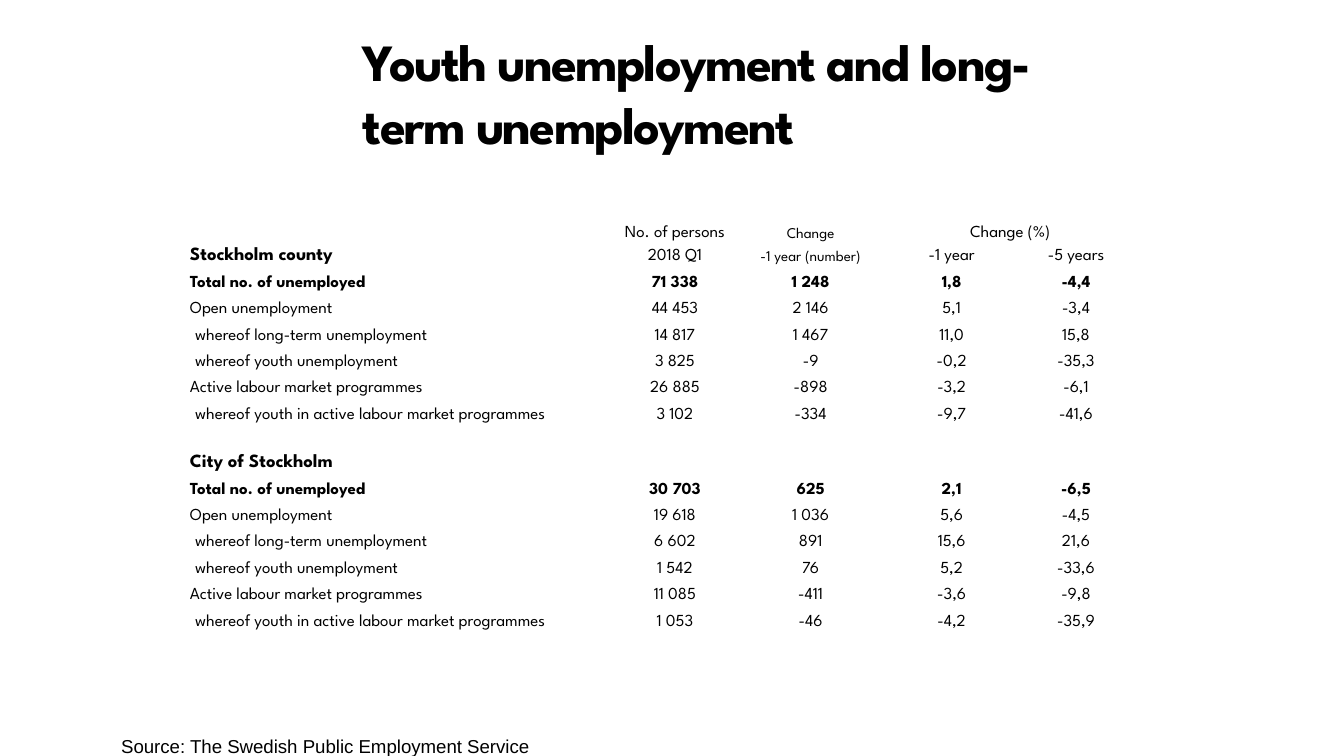
from lxml import etree
from pptx import Presentation
from pptx import util as u
from pptx.dml.color import RGBColor
from pptx.enum import text
from pptx.oxml.ns import qn

COLOURS = {"text": "000000"}
HEADING_FONT = "League Spartan"
SOURCE_FONT = "Arial"

LABELS = [
    "Total no. of unemployed",
    "Open unemployment",
    "whereof long-term unemployment",
    "whereof youth unemployment",
    "Active labour market programmes",
    "whereof youth in active labour market programmes",
]
COUNTY = [
    ("71 338", "1 248", "1,8", "-4,4"),
    ("44 453", "2 146", "5,1", "-3,4"),
    ("14 817", "1 467", "11,0", "15,8"),
    ("3 825", "-9", "-0,2", "-35,3"),
    ("26 885", "-898", "-3,2", "-6,1"),
    ("3 102", "-334", "-9,7", "-41,6"),
]
CITY = [
    ("30 703", "625", "2,1", "-6,5"),
    ("19 618", "1 036", "5,6", "-4,5"),
    ("6 602", "891", "15,6", "21,6"),
    ("1 542", "76", "5,2", "-33,6"),
    ("11 085", "-411", "-3,6", "-9,8"),
    ("1 053", "-46", "-4,2", "-35,9"),
]
BLANK = ("",) * 4
ROWS = [
    ("", "No. of persons", "Change", "Change (%)", ""),
    ("Stockholm county", "2018 Q1", "-1 year (number)", "-1 year", "-5 years"),
    *[(label, *values) for label, values in zip(LABELS, COUNTY)],
    ("", *BLANK),
    ("City of Stockholm", *BLANK),
    *[(label, *values) for label, values in zip(LABELS, CITY)],
]
REGIONS = ("Stockholm county", "City of Stockholm")
SMALL_HEADERS = ("Change", "-1 year (number)")
COLUMN_WIDTHS = [8.05, 2.29, 2.84, 2.49, 2.21]
ROW_HEIGHT = 0.5
SPECIAL_HEIGHTS = {0: 0.61, 1: 0.43, 8: 0.41}


def set_values(target, **values):
    for name, value in values.items():
        setattr(target, name, value)


def add_span(para, wording, font_name, size, bold=False):
    span = para.add_run()
    span.text = wording
    set_values(span.font, name=font_name, size=u.Pt(size), bold=bold)
    span.font.color.rgb = RGBColor.from_string(COLOURS["text"])
    return span


def set_frame(frame, wrap):
    set_values(frame, margin_left=0, margin_right=0, margin_top=0, margin_bottom=0,
               word_wrap=wrap, vertical_anchor=text.MSO_ANCHOR.TOP,
               auto_size=text.MSO_AUTO_SIZE.NONE)


def add_title(page, wording):
    title = page.shapes.title
    set_values(title, left=u.Cm(6.86), top=u.Cm(0.56),
               width=u.Cm(13.34), height=u.Cm(1.65))
    set_frame(title.text_frame, True)
    para = title.text_frame.paragraphs[0]
    set_values(para, alignment=text.PP_ALIGN.LEFT, line_spacing=1.0)
    span = add_span(para, wording, HEADING_FONT, 28, True)
    span.font._element.set("spc", "-90")


def add_source(page, wording):
    box = page.shapes.add_textbox(u.Cm(2.29), u.Cm(13.46), u.Cm(2.54), u.Cm(1.07))
    set_frame(box.text_frame, False)
    para = box.text_frame.paragraphs[0]
    set_values(para, alignment=text.PP_ALIGN.LEFT, line_spacing=u.Pt(24))
    add_span(para, wording, SOURCE_FONT, 10)


def fill_cell(cell, wording, is_label, bold_row):
    indent = 0.1 if wording.startswith("whereof") else 0
    set_values(cell, margin_left=u.Cm(0.03 + indent), margin_right=u.Cm(0.03),
               margin_top=u.Cm(0.03), margin_bottom=0,
               vertical_anchor=text.MSO_ANCHOR.BOTTOM)
    cell.fill.background()
    para = cell.text_frame.paragraphs[0]
    para.alignment = text.PP_ALIGN.LEFT if is_label else text.PP_ALIGN.CENTER
    if not wording:
        # keeps the empty line low enough for its row
        etree.SubElement(para._p, qn("a:endParaRPr"), sz="800")
        return
    is_region = wording in REGIONS
    size = 10 if is_region else 8 if wording in SMALL_HEADERS else 9
    add_span(para, wording, HEADING_FONT, size, is_region or bold_row)


def add_figures(page):
    frame = page.shapes.add_table(
        len(ROWS), len(COLUMN_WIDTHS), u.Cm(3.56), u.Cm(3.96),
        u.Cm(sum(COLUMN_WIDTHS)), u.Cm(ROW_HEIGHT * len(ROWS)))
    table = frame.table
    set_values(table, first_row=False, horz_banding=False)
    for column, width in zip(table.columns, COLUMN_WIDTHS):
        column.width = u.Cm(width)
    for r, wordings in enumerate(ROWS):
        table.rows[r].height = u.Cm(SPECIAL_HEIGHTS.get(r, ROW_HEIGHT))
        for c, wording in enumerate(wordings):
            fill_cell(table.cell(r, c), wording, c == 0, wordings[0] == LABELS[0])
    table.cell(0, 3).merge(table.cell(0, 4))
    # the plain style without grid lines
    style = table._tbl.tblPr.find(qn("a:tableStyleId"))
    style.text = "{2D5ABB26-0587-4C30-8999-92F81FD0307C}"


def main():
    deck = Presentation()
    set_values(deck, slide_width=u.Cm(25.4), slide_height=u.Cm(14.29))
    page = deck.slides.add_slide(deck.slide_layouts[5])
    add_title(page, "Youth unemployment and long-term unemployment")
    add_source(page, "Source: The Swedish Public Employment Service")
    add_figures(page)
    deck.save("out.pptx")


if __name__ == "__main__":
    main()
